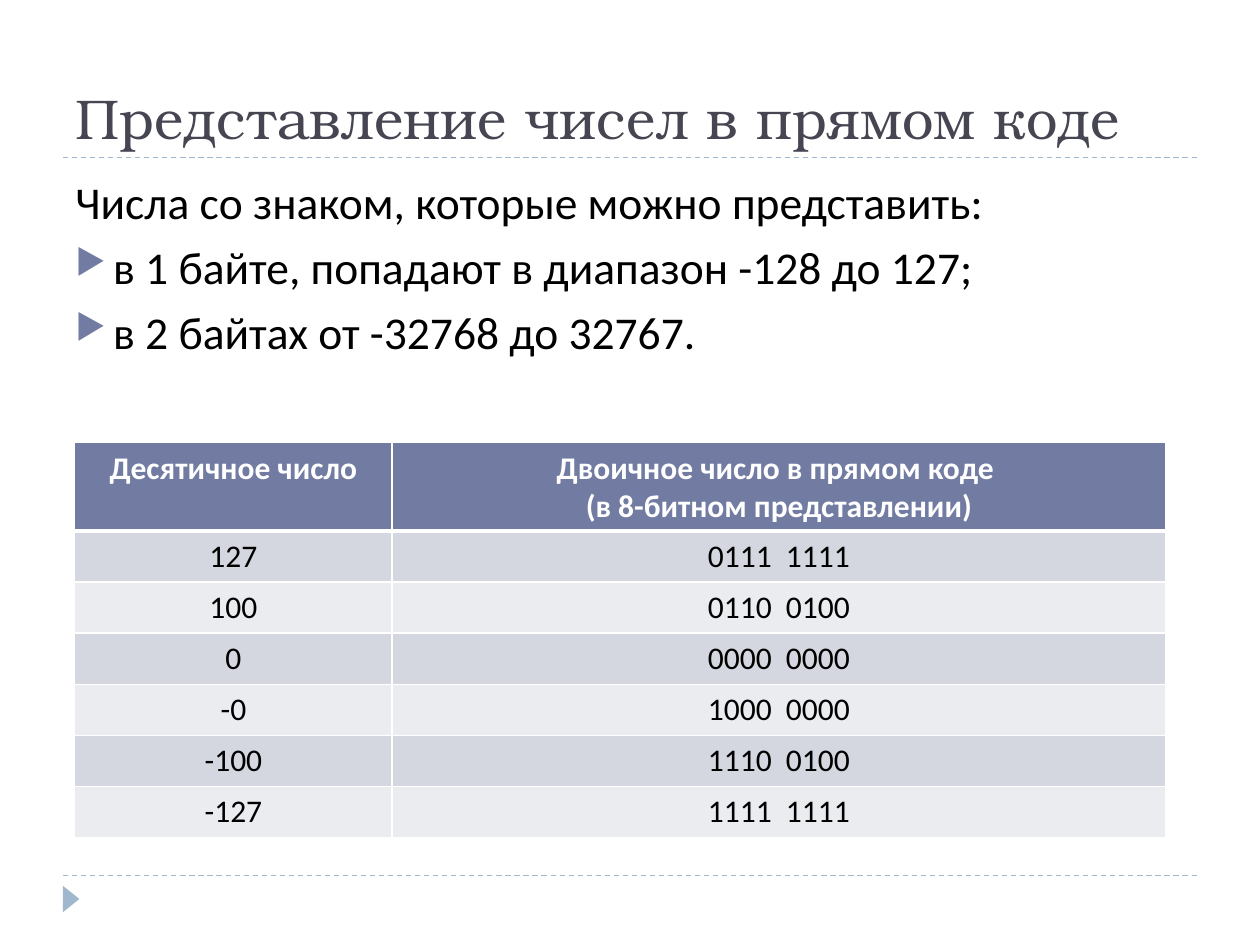
from typing import NamedTuple

from lxml.etree import SubElement
from pptx import Presentation
from pptx.dml.color import RGBColor
from pptx.enum.dml import MSO_LINE_DASH_STYLE as Dash
from pptx.enum.shapes import MSO_CONNECTOR_TYPE as Connector, MSO_SHAPE as Shape
from pptx.enum.text import MSO_ANCHOR as Anchor, MSO_AUTO_SIZE as AutoSize, PP_ALIGN as Align
from pptx.oxml.ns import qn
from pptx.util import Pt

WHITE = RGBColor(0xFF, 0xFF, 0xFF)
BLACK = RGBColor(0x00, 0x00, 0x00)
TITLE_GREY = RGBColor(0x46, 0x46, 0x53)
ACCENT = RGBColor(0x72, 0x7C, 0xA3)
PALE_BLUE = RGBColor(0x9F, 0xB8, 0xCD)
BAND_DARK = RGBColor(0xD5, 0xD7, 0xE0)
BAND_LIGHT = RGBColor(0xEB, 0xEC, 0xF0)

LEFT, WIDTH = 36, 648
TITLE_RULE, FOOTER_RULE = 90, 500.4


class BodyLine(NamedTuple):
    text: str
    bulleted: bool


class CodeRow(NamedTuple):
    decimal: str
    binary: str


BODY = [
    BodyLine("Числа со знаком, которые можно представить:", False),
    BodyLine("в 1 байте, попадают в диапазон -128 до 127;", True),
    BodyLine("в 2 байтах от -32768 до 32767.", True),
]
HEADER = CodeRow("Десятичное число", "Двоичное число в прямом коде \v(в 8-битном представлении)")
CODES = [
    CodeRow("127", "0111  1111"),
    CodeRow("100", "0110  0100"),
    CodeRow("0", "0000  0000"),
    CodeRow("-0", "1000  0000"),
    CodeRow("-100", "1110  0100"),
    CodeRow("-127", "1111  1111"),
]


def format_font(font, color: RGBColor, **values) -> None:
    for name, value in values.items():
        setattr(font, name, value)
    font.color.rgb = color


def add_rule(slide, top: float) -> None:
    rule = slide.shapes.add_connector(
        Connector.STRAIGHT, Pt(LEFT), Pt(top), Pt(LEFT + WIDTH), Pt(top))
    rule.line.color.rgb = PALE_BLUE
    rule.line.width = Pt(0.75)
    rule.line.dash_style = Dash.DASH
    SubElement(rule._element.spPr, qn("a:effectLst"))


def add_marker(slide) -> None:
    marker = slide.shapes.add_shape(
        Shape.ISOSCELES_TRIANGLE, Pt(33.1), Pt(509), Pt(15.1), Pt(9.4))
    marker.rotation = 90
    marker.shadow.inherit = False
    marker.fill.solid()
    marker.fill.fore_color.rgb = PALE_BLUE
    marker.line.fill.background()


def set_title(slide, text: str) -> None:
    title = slide.shapes.title
    title.left, title.top, title.width, title.height = Pt(LEFT), Pt(12), Pt(WIDTH), Pt(78)
    frame = title.text_frame
    frame.text = text
    frame.vertical_anchor = Anchor.BOTTOM
    frame.auto_size = AutoSize.NONE
    paragraph = frame.paragraphs[0]
    paragraph.alignment = Align.LEFT
    format_font(paragraph.runs[0].font, TITLE_GREY, name="TeX Gyre Bonum", size=Pt(32))


def add_bullet(paragraph) -> None:
    properties = paragraph._p.get_or_add_pPr()
    properties.set("marL", str(Pt(21.6)))
    properties.set("indent", str(Pt(-21.6)))
    color = SubElement(properties, qn("a:buClr"))
    SubElement(color, qn("a:srgbClr"), val=str(ACCENT))
    SubElement(properties, qn("a:buSzPct"), val="76000")
    SubElement(properties, qn("a:buChar"), char="▶")


def add_body(slide, lines: list[BodyLine]) -> None:
    frame = slide.shapes.add_textbox(Pt(LEFT), Pt(95.8), Pt(WIDTH), Pt(388.8)).text_frame
    frame.word_wrap = True
    for index, line in enumerate(lines):
        paragraph = frame.add_paragraph() if index else frame.paragraphs[0]
        paragraph.space_before = Pt(6)
        run = paragraph.add_run()
        run.text = line.text
        format_font(run.font, BLACK, name="Calibri", size=Pt(26))
        if line.bulleted:
            add_bullet(paragraph)


def set_borders(cell, bottom: float) -> None:
    properties = cell._tc.get_or_add_tcPr()
    for index, (side, width) in enumerate({"L": 1, "R": 1, "T": 1, "B": bottom}.items()):
        border = SubElement(properties, qn(f"a:ln{side}"), w=str(Pt(width)))
        fill = SubElement(border, qn("a:solidFill"))
        SubElement(fill, qn("a:srgbClr"), val=str(WHITE))
        properties.insert(index, border)  # borders come before the cell fill


def fill_cell(cell, text: str, row: int) -> None:
    is_header = row == 0
    cell.fill.solid()
    cell.fill.fore_color.rgb = ACCENT if is_header else (BAND_LIGHT, BAND_DARK)[row % 2]
    set_borders(cell, bottom=3 if is_header else 1)
    cell.text = text
    paragraph = cell.text_frame.paragraphs[0]
    paragraph.alignment = Align.CENTER
    for run in paragraph.runs:
        format_font(run.font, WHITE if is_header else BLACK,
                    name="Calibri", size=Pt(18), bold=is_header)


def add_code_table(slide, rows: list[CodeRow]) -> None:
    table = slide.shapes.add_table(
        len(rows), 2, Pt(42.7), Pt(253), Pt(623.5), Pt(225.4)).table
    for column, width in zip(table.columns, (181.4, 442.1)):
        column.width = Pt(width)
    for index, row in enumerate(rows):
        table.rows[index].height = Pt(29.2 if index else 45.4)
        for column, text in enumerate(row):
            fill_cell(table.cell(index, column), text, index)


def main() -> None:
    presentation = Presentation()
    presentation.slide_width, presentation.slide_height = Pt(720), Pt(540)
    slide = presentation.slides.add_slide(presentation.slide_layouts[5])

    # Frame of the slide
    for top in (FOOTER_RULE, TITLE_RULE):
        add_rule(slide, top)
    add_marker(slide)

    # Content
    set_title(slide, "Представление чисел в прямом коде")
    add_body(slide, BODY)
    add_code_table(slide, [HEADER, *CODES])

    presentation.save("out.pptx")


if __name__ == "__main__":
    main()
